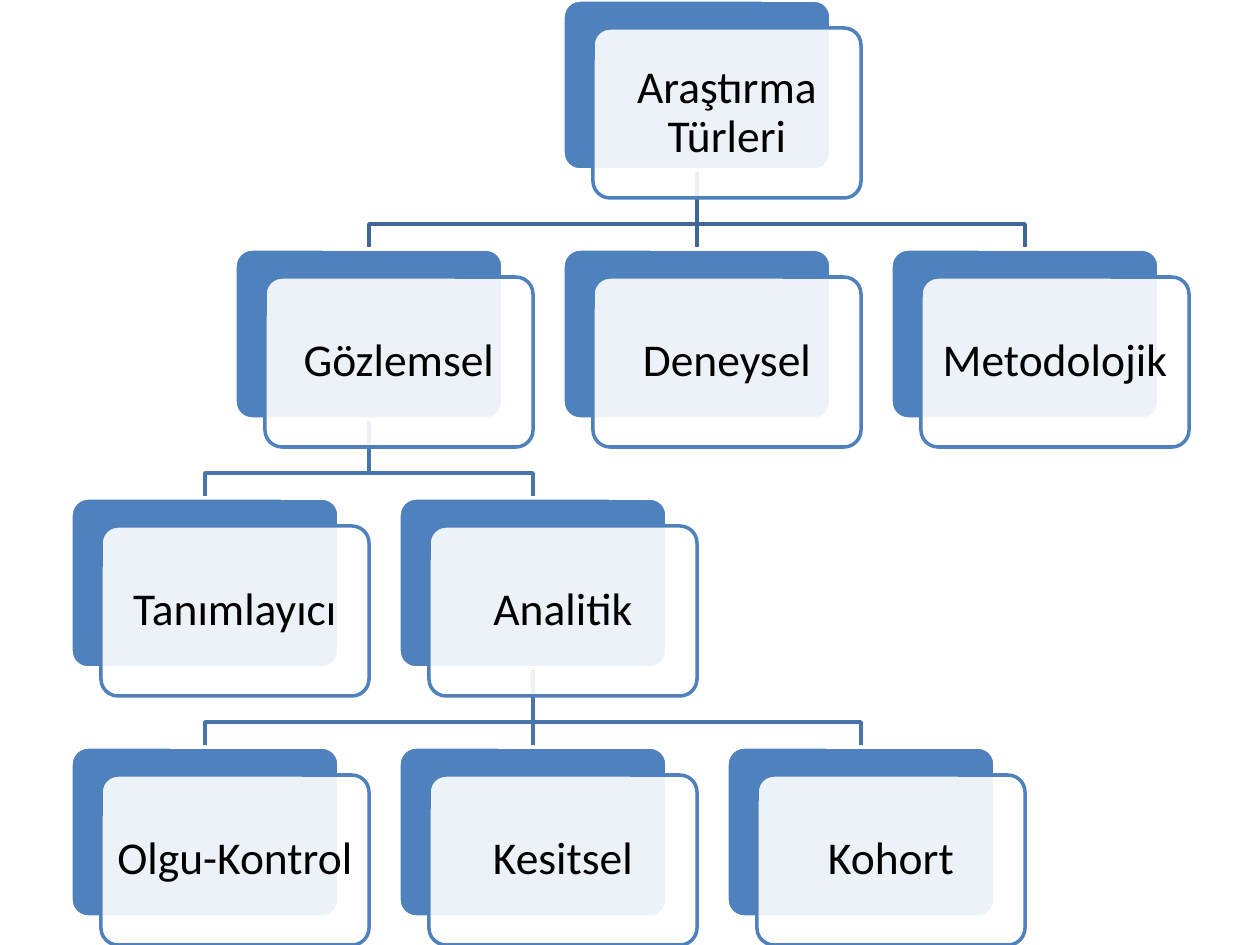
from dataclasses import dataclass

from lxml.etree import SubElement
from pptx import Presentation
from pptx.dml.color import RGBColor
from pptx.enum.shapes import MSO_CONNECTOR, MSO_SHAPE
from pptx.enum.text import MSO_ANCHOR, PP_ALIGN
from pptx.oxml.ns import qn
from pptx.util import Emu, Pt

SCALE = 914400 / 126  # EMU per px
SLIDE_WIDTH, SLIDE_HEIGHT = 1260, 945
CARD_WIDTH, CARD_HEIGHT = 268, 170
OFFSET_X, OFFSET_Y = 30, 28  # front card relative to back card
HALF_PITCH, ROW_PITCH = 164, 249
BEND = 54  # from the bottom of a parent to the horizontal branch
TREE_LEFT, ROOT_COLUMN = 71, 3  # columns are counted in half pitches
TEXT_INSET = 9

# (label, children)
TREE = ("Araştırma Türleri", [
    ("Gözlemsel", [
        ("Tanımlayıcı", []),
        ("Analitik", [("Olgu-Kontrol", []), ("Kesitsel", []), ("Kohort", [])]),
    ]),
    ("Deneysel", []),
    ("Metodolojik", []),
])


@dataclass(frozen=True)
class Theme:
    blue: RGBColor = RGBColor(0x4F, 0x81, 0xBD)
    white: RGBColor = RGBColor(0xFF, 0xFF, 0xFF)
    text: RGBColor = RGBColor(0x00, 0x00, 0x00)
    root_branch: RGBColor = RGBColor(0x3F, 0x67, 0x97)
    branch: RGBColor = RGBColor(0x48, 0x75, 0xAC)
    font: str = "Calibri"
    label_size: Pt = Pt(26)
    line_width: Pt = Pt(2)


THEME = Theme()


def px(value):
    return Emu(round(value * SCALE))


def style_line(line, color):
    line.color.rgb = color
    line.width = THEME.line_width


def add_card(slide, left, top, fill, outline):
    shape = slide.shapes.add_shape(
        MSO_SHAPE.ROUNDED_RECTANGLE, px(left), px(top), px(CARD_WIDTH), px(CARD_HEIGHT))
    shape.adjustments[0] = 0.1
    shape.shadow.inherit = False
    shape.fill.solid()
    shape.fill.fore_color.rgb = fill
    style_line(shape.line, outline)
    return shape


def add_node(slide, left, top, label):
    # Solid card behind, translucent card with the label in front
    add_card(slide, left, top, THEME.blue, THEME.white)
    front = add_card(slide, left + OFFSET_X, top + OFFSET_Y, THEME.white, THEME.blue)
    fill_color = front.fill._xPr.find(qn("a:solidFill"))[0]
    SubElement(fill_color, qn("a:alpha"), val="90000")

    frame = front.text_frame
    frame.word_wrap = True
    frame.vertical_anchor = MSO_ANCHOR.MIDDLE
    frame.margin_left = frame.margin_right = px(TEXT_INSET)
    frame.margin_top = frame.margin_bottom = px(TEXT_INSET)
    paragraph = frame.paragraphs[0]
    paragraph.alignment = PP_ALIGN.CENTER
    paragraph.line_spacing = 0.9
    run = paragraph.add_run()
    run.text = label
    run.font.name = THEME.font
    run.font.size = THEME.label_size
    run.font.color.rgb = THEME.text


def add_branch(slide, start_x, start_y, end_x, end_y, color):
    if start_x == end_x:
        connector = slide.shapes.add_connector(
            MSO_CONNECTOR.STRAIGHT, px(start_x), px(start_y), px(end_x), px(end_y))
        SubElement(connector._element.spPr, qn("a:effectLst"))
        style_line(connector.line, color)
        return
    bend_y = start_y + BEND
    builder = slide.shapes.build_freeform(start_x, start_y, scale=SCALE)
    builder.add_line_segments(
        [(start_x, bend_y), (end_x, bend_y), (end_x, end_y)], close=False)
    shape = builder.convert_to_shape()
    shape.shadow.inherit = False
    shape.fill.background()
    style_line(shape.line, color)


def place_tree(node, left, top, parent=None):
    """List (label, left, top, parent position), children centred on the parent."""
    label, children = node
    places = [(label, left, top, parent)]
    for index, child in enumerate(children):
        shift = (2 * index - len(children) + 1) * HALF_PITCH
        # A sibling pair or triple is spread symmetrically below its parent
        places += place_tree(child, left + shift, top + ROW_PITCH, (left, top))
    return places


def draw_tree(slide, left, top):
    places = place_tree(TREE, left + ROOT_COLUMN * HALF_PITCH, top)
    middle = CARD_WIDTH // 2

    # Branches lie behind all cards
    for _, node_left, node_top, parent in places:
        if parent:
            parent_left, parent_top = parent
            color = THEME.root_branch if parent_top == top else THEME.branch
            add_branch(slide, parent_left + middle, parent_top + CARD_HEIGHT,
                       node_left + middle, node_top, color)

    # Cards
    for label, node_left, node_top, _ in places:
        add_node(slide, node_left, node_top, label)


def main():
    presentation = Presentation()
    presentation.slide_width = px(SLIDE_WIDTH)
    presentation.slide_height = px(SLIDE_HEIGHT)
    slide = presentation.slides.add_slide(presentation.slide_layouts[6])
    draw_tree(slide, TREE_LEFT, 0)
    presentation.save("out.pptx")


if __name__ == "__main__":
    main()
